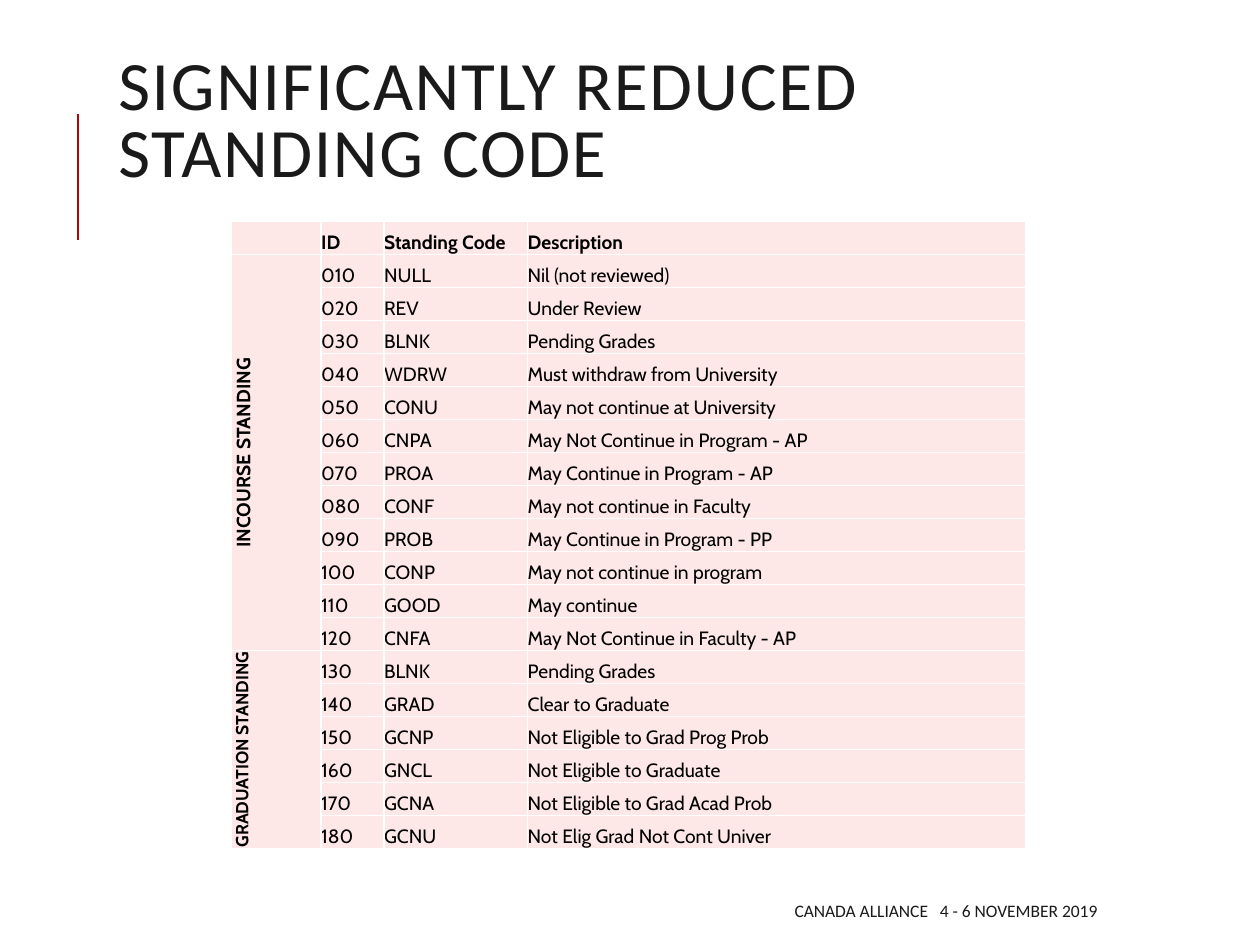
from lxml.etree import SubElement
from pptx import Presentation
from pptx.dml.color import RGBColor
from pptx.enum.shapes import MSO_CONNECTOR
from pptx.enum.text import MSO_ANCHOR, MSO_AUTO_SIZE, PP_ALIGN
from pptx.oxml.ns import qn
from pptx.util import Cm, Pt

WHITE = RGBColor(0xFF, 0xFF, 0xFF)
BLACK = RGBColor(0, 0, 0)
INK = RGBColor(0x1A, 0x1A, 0x1A)
RED = RGBColor(0xB4, 0x04, 0x04)
PINK = RGBColor(0xFD, 0xE7, 0xE7)

HEADINGS = ("ID", "Standing Code", "Description")
# Standing group, its label size in points, and its codes
GROUPS = [
    ("INCOURSE STANDING", 11, [
        ("NULL", "Nil (not reviewed)"),
        ("REV", "Under Review"),
        ("BLNK", "Pending Grades"),
        ("WDRW", "Must withdraw from University"),
        ("CONU", "May not continue at University"),
        ("CNPA", "May Not Continue in Program - AP"),
        ("PROA", "May Continue in Program - AP"),
        ("CONF", "May not continue in Faculty"),
        ("PROB", "May Continue in Program - PP"),
        ("CONP", "May not continue in program"),
        ("GOOD", "May continue"),
        ("CNFA", "May Not Continue in Faculty - AP"),
    ]),
    ("GRADUATION STANDING", 10, [
        ("BLNK", "Pending Grades"),
        ("GRAD", "Clear to Graduate"),
        ("GCNP", "Not Eligible to Grad Prog Prob"),
        ("GNCL", "Not Eligible to Graduate"),
        ("GCNA", "Not Eligible to Grad Acad Prob"),
        ("GCNU", "Not Elig Grad Not Cont Univer"),
    ]),
]


def write_text(frame, text, size=11, font="Cabin", color=BLACK, bold=False,
               align=PP_ALIGN.LEFT, line_spacing=1.0, tracking=0):
    paragraph = frame.paragraphs[0]
    paragraph.alignment = align
    paragraph.line_spacing = line_spacing
    if not text:  # keeps an empty cell from growing its row
        SubElement(paragraph._p, qn("a:endParaRPr"), sz=str(size * 100))
        return
    run = paragraph.add_run()
    run.text = text
    run.font.size = Pt(size)
    run.font.name = font
    run.font.bold = bold
    run.font.color.rgb = color
    if tracking:
        run._r.get_or_add_rPr().set("spc", str(tracking * 100))


def format_cell(cell, text="", anchor=MSO_ANCHOR.BOTTOM, upright=False, **text_format):
    cell.margin_left = cell.margin_right = cell.margin_top = cell.margin_bottom = 0
    cell.vertical_anchor = anchor
    properties = cell._tc.get_or_add_tcPr()
    if upright:
        properties.set("vert", "vert270")
    for side in ("lnL", "lnR", "lnT", "lnB"):
        border = SubElement(properties, qn(f"a:{side}"), w=str(Pt(1)))
        border_fill = SubElement(border, qn("a:solidFill"))
        SubElement(border_fill, qn("a:srgbClr"), val=str(WHITE))
    cell.fill.solid()
    cell.fill.fore_color.rgb = PINK
    write_text(cell.text_frame, text, **text_format)


def place_title(slide, left, top, width, height):
    # Red rule beside the heading
    rule_x = left - Cm(0.56)
    rule_top = top + Cm(0.66)
    rule = slide.shapes.add_connector(MSO_CONNECTOR.STRAIGHT, rule_x,
                                      rule_top + Cm(2.54), rule_x, rule_top)
    rule.line.color.rgb = RED
    rule.line.width = Pt(1.5)
    SubElement(rule._element.spPr, qn("a:effectLst"))

    # Heading
    title = slide.shapes.title
    title.left, title.top, title.width, title.height = left, top, width, height
    frame = title.text_frame
    frame.word_wrap = True
    frame.auto_size = MSO_AUTO_SIZE.NONE
    frame.vertical_anchor = MSO_ANCHOR.MIDDLE
    write_text(frame, "SIGNIFICANTLY REDUCED STANDING CODE", size=39.6,
               font="Calibri", color=INK, line_spacing=0.8, tracking=1)


def place_standing_table(slide, left, top, width, height):
    row_count = 1 + sum(len(codes) for _, _, codes in GROUPS)
    table = slide.shapes.add_table(row_count, 4, left, top, width, height).table
    table.first_row = table.horz_banding = False
    for column, share in zip(table.columns, (0.71, 0.5, 1.14, 3.95)):
        column.width = int(width * share / 6.3)
    for row in table.rows:
        row.height = height // row_count

    # Header row
    for column, heading in enumerate(("",) + HEADINGS):
        format_cell(table.cell(0, column), heading, bold=True)

    # Groups, with IDs in steps of ten
    first = 1
    for label, label_size, codes in GROUPS:
        last = first + len(codes) - 1
        table.cell(first, 0).merge(table.cell(last, 0))
        for row, (code, description) in enumerate(codes, first):
            if row == first:
                format_cell(table.cell(row, 0), label, MSO_ANCHOR.MIDDLE, upright=True,
                            size=label_size, bold=True, align=PP_ALIGN.CENTER)
            else:
                format_cell(table.cell(row, 0))
            for column, text in enumerate((f"{row * 10:03}", code, description), 1):
                format_cell(table.cell(row, column), text)
        first = last + 1


def place_footer(slide, left, top, width, height):
    footer = slide.shapes.add_textbox(left, top, width, height)
    footer.text_frame.word_wrap = True
    footer.text_frame.vertical_anchor = MSO_ANCHOR.MIDDLE
    write_text(footer.text_frame, "CANADA ALLIANCE   4 - 6 NOVEMBER 2019", size=10,
               font="Calibri", color=INK, align=PP_ALIGN.RIGHT)


def main():
    deck = Presentation()
    deck.slide_width, deck.slide_height = Cm(25.4), Cm(19.05)
    slide = deck.slides.add_slide(deck.slide_layouts[5])
    slide.background.fill.solid()
    slide.background.fill.fore_color.rgb = WHITE
    place_title(slide, Cm(2.13), Cm(1.63), Cm(20.24), Cm(1.75))
    place_footer(slide, Cm(10.08), Cm(17.98), Cm(12.29), Cm(0.76))
    place_standing_table(slide, Cm(4.67), Cm(4.47), Cm(16), Cm(12.65))
    deck.save("out.pptx")


if __name__ == "__main__":
    main()
